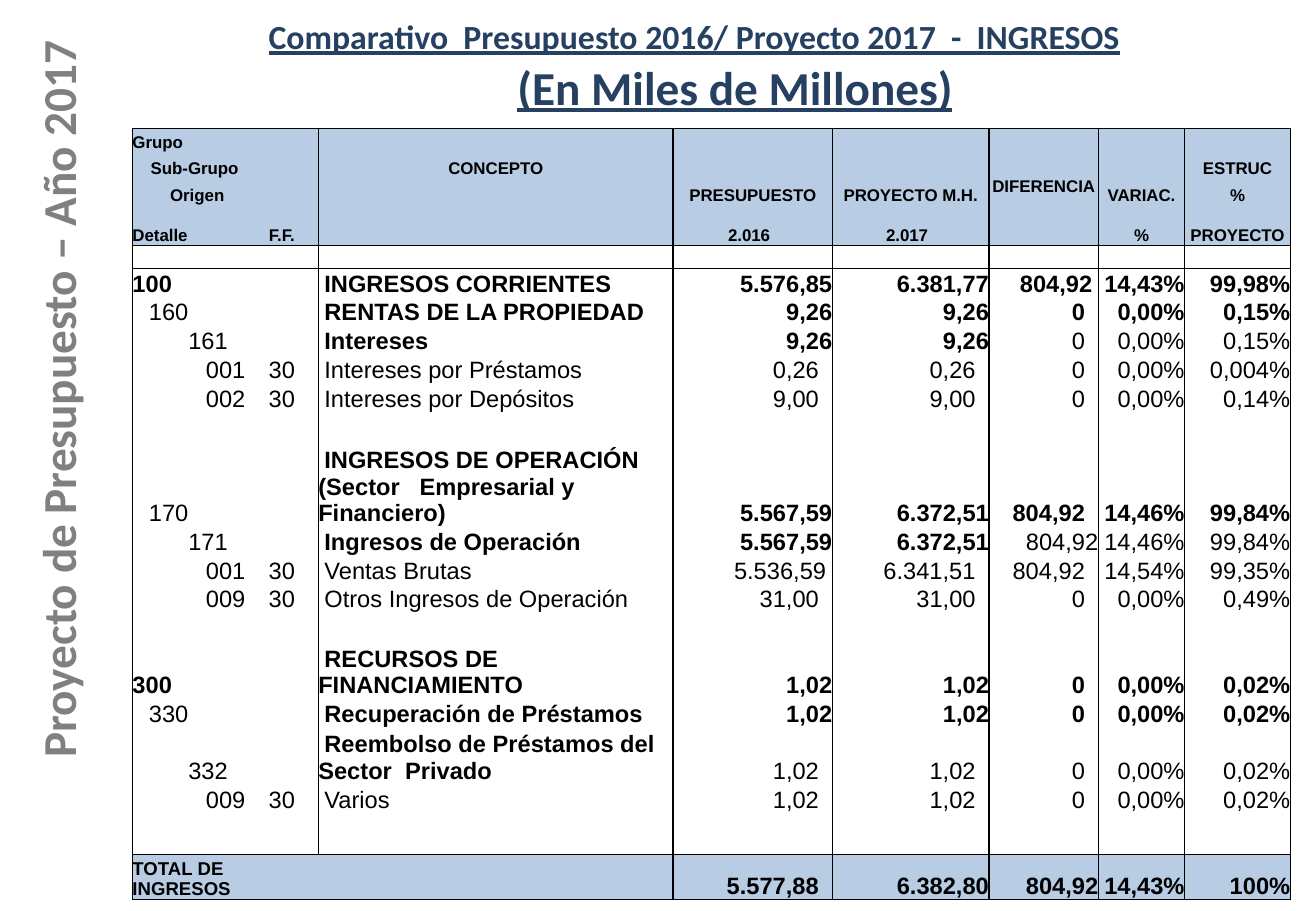
from lxml.etree import SubElement
from pptx import Presentation
from pptx.dml.color import RGBColor
from pptx.enum.text import MSO_ANCHOR, PP_ALIGN
from pptx.oxml.ns import qn
from pptx.util import Inches, Pt

COLORS = {"navy": "254061", "gray": "808080", "header": "B8CCE4", "black": "000000"}
LEFT, CENTER, RIGHT = PP_ALIGN.LEFT, PP_ALIGN.CENTER, PP_ALIGN.RIGHT


def write(paragraph, text, size, color, font="Arial", bold=True, underline=False, align=LEFT):
    paragraph.alignment = align
    run = paragraph.add_run()
    run.text = text
    run.font.name = font
    run.font.size = Pt(size)
    run.font.bold = bold
    run.font.underline = underline
    run.font.color.rgb = RGBColor.from_string(COLORS[color])


def add_border(cell, side):
    line = SubElement(cell._tc.get_or_add_tcPr(), qn(f"a:ln{side}"), w=str(Pt(1)))
    fill = SubElement(line, qn("a:solidFill"))
    SubElement(fill, qn("a:srgbClr"), val=COLORS["black"])


presentation = Presentation()
presentation.slide_width = Inches(10.83)
presentation.slide_height = Inches(7.5)
slide = presentation.slides.add_slide(presentation.slide_layouts[5])

project_label = slide.shapes.add_textbox(Inches(-2.76), Inches(2.85), Inches(6.25), Inches(0.72))
project_label.rotation = 270
project_label.text_frame.word_wrap = True
project_label.text_frame.vertical_anchor = MSO_ANCHOR.BOTTOM
project_label.text_frame.margin_bottom = Inches(0.02)
write(project_label.text_frame.paragraphs[0], "Proyecto de Presupuesto – Año 2017", 28, "gray", "Calibri")

title = slide.shapes.title
title.left, title.top, title.width, title.height = Inches(2.11), Inches(0.08), Inches(7.83), Inches(0.78)
title.text_frame.vertical_anchor = MSO_ANCHOR.TOP
write(title.text_frame.paragraphs[0], "Comparativo  Presupuesto 2016/ Proyecto 2017  -  INGRESOS",
      20, "navy", "Calibri", underline=True)

units = slide.shapes.add_textbox(Inches(4.16), Inches(0.43), Inches(4.49), Inches(0.84))
units.text_frame.word_wrap = True
write(units.text_frame.paragraphs[0], "(En Miles de Millones)", 28, "navy", "Calibri", underline=True)

column_widths = [0.46, 0.47, 0.6, 2.92, 1.31, 1.29, 0.9, 0.71, 0.87]
row_heights = [0.19, 0.22, 0.22, 0.33, 0.19, 0.24, 0.23, 0.24, 0.23, 0.24, 0.24,
               0.69, 0.23, 0.24, 0.23, 0.24, 0.47, 0.23, 0.47, 0.24, 0.34, 0.37]
header_rows, total_row = 4, 21

header_cells = [
    (0, 0, "Grupo", LEFT, 0),
    (1, 0, "Sub-Grupo", LEFT, 0.15),
    (2, 0, "Origen", LEFT, 0.31),
    (3, 0, "Detalle", LEFT, 0),
    (3, 2, "F.F.", CENTER, 0),
    (1, 3, "CONCEPTO", CENTER, 0),
    (2, 4, "PRESUPUESTO", CENTER, 0),
    (3, 4, "2.016", CENTER, 0),
    (2, 5, "PROYECTO M.H.", CENTER, 0),
    (3, 5, "2.017", CENTER, 0),
    (0, 6, "DIFERENCIA", CENTER, 0),
    (2, 7, "VARIAC.", CENTER, 0),
    (3, 7, "%", CENTER, 0),
    (1, 8, "ESTRUC", CENTER, 0),
    (2, 8, "%", CENTER, 0),
    (3, 8, "PROYECTO", CENTER, 0),
]

income_rows = {
    5: (6, ["100", "", "", "INGRESOS CORRIENTES", "5.576,85", "6.381,77", "804,92", "14,43%", "99,98%"]),
    6: (6, ["160", "", "", "RENTAS DE LA PROPIEDAD", "9,26", "9,26", "0", "0,00%", "0,15%"]),
    7: (3, ["", "161", "", "Intereses", "9,26", "9,26", "0", "0,00%", "0,15%"]),
    8: (0, ["", "001", "30", "Intereses por Préstamos", "0,26", "0,26", "0", "0,00%", "0,004%"]),
    9: (0, ["", "002", "30", "Intereses por Depósitos", "9,00", "9,00", "0", "0,00%", "0,14%"]),
    11: (6, ["170", "", "", "INGRESOS DE OPERACIÓN (Sector   Empresarial y Financiero)",
             "5.567,59", "6.372,51", "804,92", "14,46%", "99,84%"]),
    12: (3, ["", "171", "", "Ingresos de Operación", "5.567,59", "6.372,51", "804,92", "14,46%", "99,84%"]),
    13: (0, ["", "001", "30", "Ventas Brutas", "5.536,59", "6.341,51", "804,92", "14,54%", "99,35%"]),
    14: (0, ["", "009", "30", "Otros Ingresos de Operación", "31,00", "31,00", "0", "0,00%", "0,49%"]),
    16: (6, ["300", "", "", "RECURSOS DE FINANCIAMIENTO", "1,02", "1,02", "0", "0,00%", "0,02%"]),
    17: (6, ["330", "", "", "Recuperación de Préstamos", "1,02", "1,02", "0", "0,00%", "0,02%"]),
    18: (1, ["", "332", "", "Reembolso de Préstamos del Sector  Privado", "1,02", "1,02", "0", "0,00%", "0,02%"]),
    19: (0, ["", "009", "30", "Varios", "1,02", "1,02", "0", "0,00%", "0,02%"]),
    21: (6, ["TOTAL DE INGRESOS", "", "", "", "5.577,88", "6.382,80", "804,92", "14,43%", "100%"]),
}
left_codes = {"100", "300", "161", "171", "332", "TOTAL DE INGRESOS"}
bold_codes = {"100", "300", "TOTAL DE INGRESOS"}
special_margins = {(5, 6): 0.05, (12, 6): 0, (21, 6): 0, (13, 4): 0.05, (21, 4): 0.11}

frame = slide.shapes.add_table(len(row_heights), len(column_widths),
                               Inches(1.09), Inches(1.06), Inches(9.53), Inches(6.29))
table = frame.table
table.first_row = False
table.horz_banding = False
table._tbl.tblPr.find(qn("a:tableStyleId")).text = "{2D5ABB26-0587-4C30-8999-92F81FD0307C}"
for column, width in zip(table.columns, column_widths):
    column.width = Inches(width)
for row, height in zip(table.rows, row_heights):
    row.height = Inches(height)

vertical_lines = {0, 3, 4, 5, 6, 7, 8, 9}
horizontal_lines = {0, header_rows, total_row, total_row + 1}
for row_index in range(len(row_heights)):
    row_lines = vertical_lines - {3} if row_index == total_row else vertical_lines
    for column_index in range(len(column_widths)):
        cell = table.cell(row_index, column_index)
        cell.margin_left = cell.margin_right = cell.margin_top = cell.margin_bottom = 0
        cell.vertical_anchor = MSO_ANCHOR.BOTTOM
        edges = {"L": column_index in row_lines, "R": column_index + 1 in row_lines,
                 "T": row_index in horizontal_lines, "B": row_index + 1 in horizontal_lines}
        for side, visible in edges.items():
            if visible:
                add_border(cell, side)
        if row_index < header_rows or row_index == total_row:
            cell.fill.solid()
            cell.fill.fore_color.rgb = RGBColor.from_string(COLORS["header"])
        else:
            cell.fill.background()
        SubElement(cell.text_frame.paragraphs[0]._p, qn("a:endParaRPr"), sz="800")

for row_index in (1, 2, 3):
    table.cell(row_index, 0).merge(table.cell(row_index, 1))
table.cell(0, 6).merge(table.cell(3, 6))
table.cell(0, 6).vertical_anchor = MSO_ANCHOR.MIDDLE
table.cell(total_row, 0).merge(table.cell(total_row, 2))

for row_index, column_index, text, align, indent in header_cells:
    cell = table.cell(row_index, column_index)
    cell.margin_left = Inches(indent)
    if text.startswith("2.01"):
        cell.margin_right = Inches(0.06)
    write(cell.text_frame.paragraphs[0], text, 10, "black", align=align)

for row_index, (bold_count, texts) in income_rows.items():
    for column_index, text in enumerate(texts):
        if not text:
            continue
        cell = table.cell(row_index, column_index)
        paragraph = cell.text_frame.paragraphs[0]
        bold = text in bold_codes if column_index < 3 else column_index - 3 < bold_count
        align = RIGHT
        if column_index == 2:
            align = CENTER
        elif column_index == 3 or text in left_codes:
            align = LEFT
        if column_index == 3:
            paragraph._p.get_or_add_pPr().set("indent", str(Inches(0.05)))
        loose = column_index == 6 or column_index in (4, 5) and not bold
        margin = special_margins.get((row_index, column_index), 0.11 if loose else 0)
        cell.margin_right = Inches(margin)
        size = 11 if text == "TOTAL DE INGRESOS" else 14
        write(paragraph, text, size, "black", bold=bold, align=align)

presentation.save("out.pptx")
